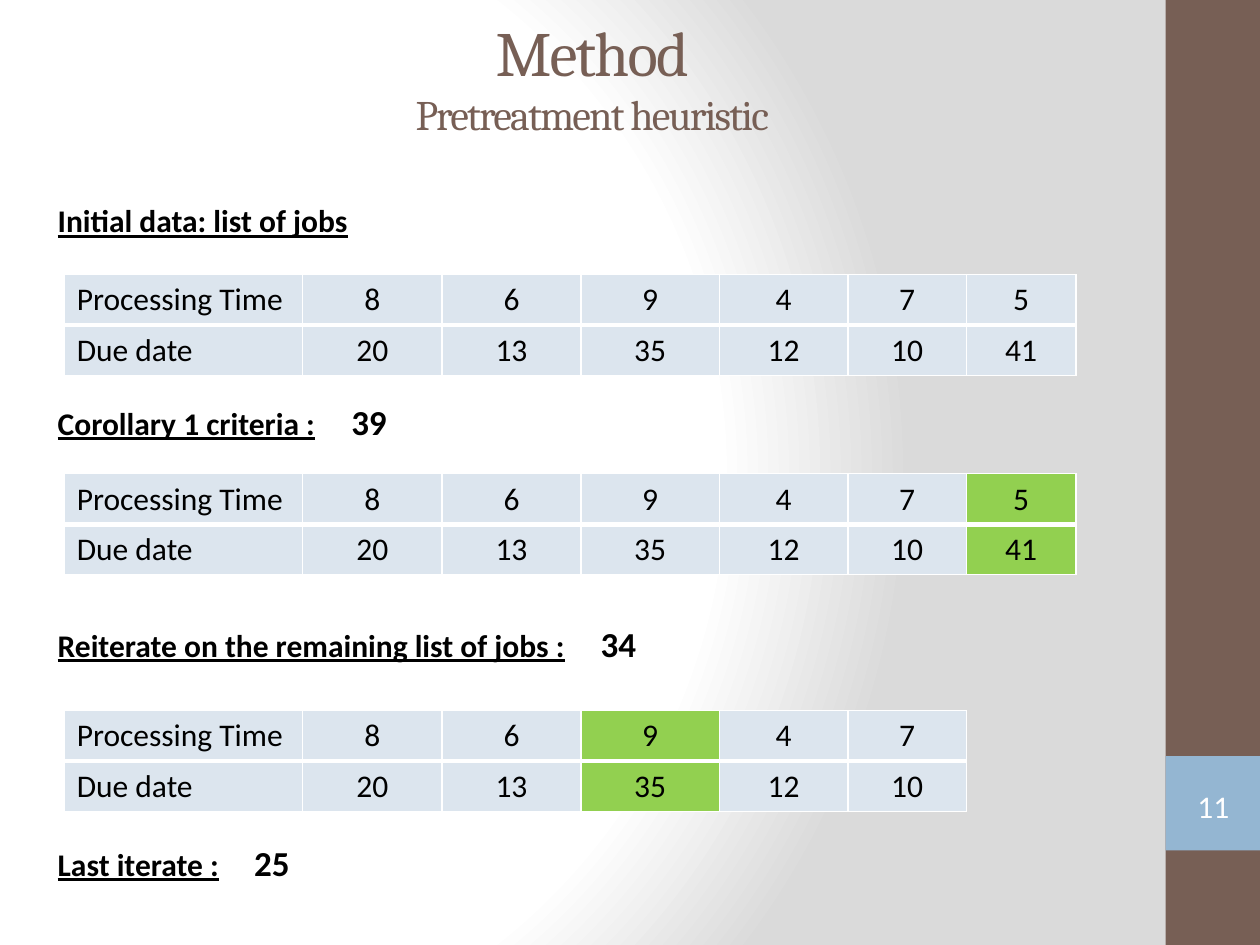
from lxml.etree import SubElement
from pptx import Presentation
from pptx.dml.color import RGBColor
from pptx.enum.shapes import MSO_SHAPE as Shape
from pptx.enum.text import MSO_ANCHOR as Anchor, PP_ALIGN as Align
from pptx.oxml import parse_xml
from pptx.oxml.ns import nsdecls, qn
from pptx.util import Inches, Pt

COLORS = {"brown": "775F55", "blue": "94B6D2", "white": "FFFFFF", "gray": "DADADA",
          "black": "000000", "cell": "DCE5EE", "chosen": "92D050"}
TITLE, SUBTITLE, PAGE = "Method", "Pretreatment heuristic", "11"
ROW_LABELS = ("Processing Time", "Due date")
JOBS = [(8, 20), (6, 13), (9, 35), (4, 12), (7, 10), (5, 41)]
LABEL_WIDTH, JOB_WIDTHS = 1.89, [1.11, 1.1, 1.1, 1.02, 0.94, 0.87]
ROW_HEIGHT = 0.4
# (heading, value, tab position, top)
HEADINGS = [
    ("Initial data: list of jobs", "", 0, 1.55),
    ("Corollary 1 criteria :", "39", 2.33, 3.13),
    ("Reiterate on the remaining list of jobs :", "34", 4.31, 4.89),
    ("Last iterate :", "25", 1.56, 6.63),
]
# (top, job count, chosen job)
JOB_TABLES = [(2.18, 6, None), (3.76, 6, 5), (5.64, 5, 2)]
BANDS = [(0, 7.5, "brown"), (6, 0.75, "blue")]
BODY = {"name": "Calibri", "size": Pt(18), "bold": False}
HEADING = {**BODY, "bold": True, "underline": True}
VALUE = {**BODY, "bold": True, "size": Pt(20)}


def rgb(color):
    return RGBColor.from_string(COLORS[color])


def add_run(paragraph, text, style, color="black"):
    run = paragraph.add_run()
    run.text = text
    for key, value in style.items():
        setattr(run.font, key, value)
    run.font.color.rgb = rgb(color)
    return run


def set_background(slide):
    slide.background.fill.solid()
    holder = slide.element.find(".//" + qn("p:bgPr"))
    stops = "".join(
        f'<a:gs pos="{pos}000"><a:srgbClr val="{COLORS[color]}"/></a:gs>'
        for pos, color in [(0, "white"), (75, "white"), (100, "gray")])
    holder.replace(holder[0], parse_xml(
        f'<a:gradFill {nsdecls("a")} rotWithShape="1"><a:gsLst>{stops}</a:gsLst>'
        '<a:path path="circle"><a:fillToRect l="20000" t="50000" r="100000" b="50000"/>'
        '</a:path></a:gradFill>'))


def add_block(slide, preset, box, color=None):
    block = slide.shapes.add_shape(preset, *map(Inches, box))
    block.shadow.inherit = False
    block.line.fill.background()
    if color:
        block.fill.solid()
        block.fill.fore_color.rgb = rgb(color)
    else:
        block.fill.background()
    return block


def add_sidebar(slide):
    for top, height, color in BANDS:
        add_block(slide, Shape.RECTANGLE, (9.25, top, 0.75, height), color)
    frame = add_block(slide, Shape.DOUBLE_BRACKET, (9.33, 6.18, 0.6, 0.43)).text_frame
    for side in ("left", "top", "right", "bottom"):
        setattr(frame, f"margin_{side}", 0)
    frame.vertical_anchor = Anchor.MIDDLE
    frame.paragraphs[0].alignment = Align.CENTER
    add_run(frame.paragraphs[0], PAGE, BODY, "white")


def add_title(slide):
    title = slide.shapes.title
    place = {"left": -0.16, "top": -0.02, "width": 9.72, "height": 1.25}
    for key, value in place.items():
        setattr(title, key, Inches(value))
    title.text_frame.vertical_anchor = Anchor.MIDDLE
    paragraph = title.text_frame.paragraphs[0]
    paragraph.alignment = Align.CENTER
    for text, size in ((TITLE, 36), (SUBTITLE, 24)):
        if text == SUBTITLE:
            paragraph.add_line_break()
        run = add_run(paragraph, text, {"name": "Cambria", "size": Pt(size)}, "brown")
        run.font._element.set("spc", "-100")


def add_heading(slide, text, value, tab, top):
    frame = slide.shapes.add_textbox(*map(Inches, (0.36, top, 7.24, 0.44))).text_frame
    frame.word_wrap = True
    paragraph = frame.paragraphs[0]
    add_run(paragraph, text, HEADING)
    if value:
        tabs = SubElement(paragraph._p.get_or_add_pPr(), qn("a:tabLst"))
        SubElement(tabs, qn("a:tab"), pos=str(Inches(tab)), algn="l")
        add_run(paragraph, "\t" + value, VALUE)


def set_borders(cell, widths):
    for index, (side, width) in enumerate(widths.items()):
        cell._tc.get_or_add_tcPr().insert(index, parse_xml(
            f'<a:ln{side} {nsdecls("a")} w="{Pt(width)}"><a:solidFill>'
            f'<a:srgbClr val="{COLORS["white"]}"/></a:solidFill></a:ln{side}>'))


def add_job_table(slide, top, count, chosen):
    widths = [LABEL_WIDTH, *JOB_WIDTHS[:count]]
    box = (0.51, top, sum(widths), ROW_HEIGHT * 2)
    table = slide.shapes.add_table(2, count + 1, *map(Inches, box)).table
    table.first_row = table.horz_banding = False
    for column, width in zip(table.columns, widths):
        column.width = Inches(width)
    for r, values in enumerate(zip(ROW_LABELS, *JOBS[:count])):
        for c, value in enumerate(values):
            cell = table.cell(r, c)
            is_chosen = chosen is not None and c == chosen + 1
            cell.fill.solid()
            cell.fill.fore_color.rgb = rgb("chosen" if is_chosen else "cell")
            set_borders(cell, {"L": 1, "R": 1, "T": 3 if r else 1, "B": 1 if r else 3})
            paragraph = cell.text_frame.paragraphs[0]
            paragraph.alignment = Align.CENTER if c else Align.LEFT
            add_run(paragraph, str(value), BODY)


def main():
    """Build the pretreatment heuristic slide."""
    deck = Presentation()
    deck.slide_width, deck.slide_height = Inches(10), Inches(7.5)
    slide = deck.slides.add_slide(deck.slide_layouts[5])
    set_background(slide)
    add_sidebar(slide)
    add_title(slide)
    for heading in HEADINGS:
        add_heading(slide, *heading)
    for job_table in JOB_TABLES:
        add_job_table(slide, *job_table)
    deck.save("out.pptx")


if __name__ == "__main__":
    main()
